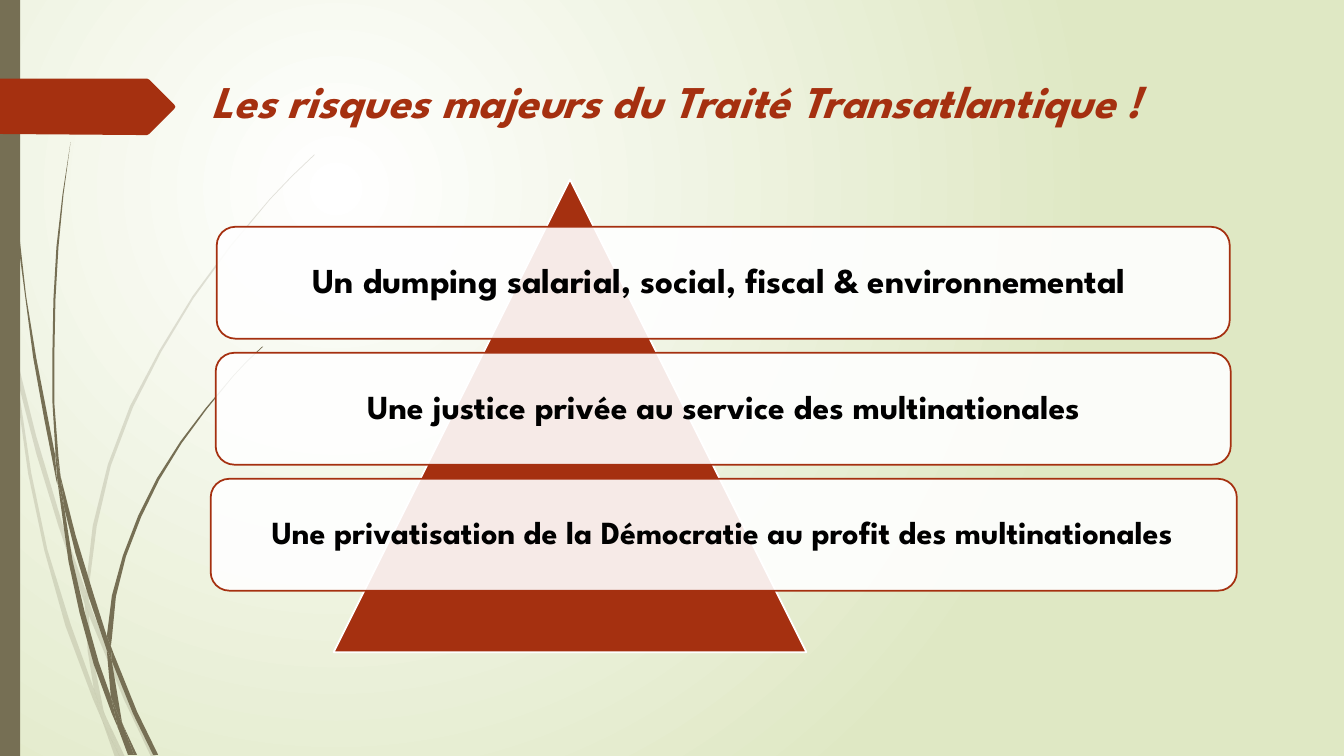
import lxml.etree
import pptx
import pptx.dml.color
import pptx.enum.shapes
import pptx.enum.text
import pptx.oxml.ns
import pptx.util

PX = 9144  # EMU: 100 px to the inch
FONT = "League Spartan"
RGB = pptx.dml.color.RGBColor
RUST = RGB(0xA5, 0x30, 0x10)
OLIVE = RGB(0x76, 0x6F, 0x54)
LIME = RGB(0xDF, 0xE8, 0xC4)
WHITE = RGB(0xFF, 0xFF, 0xFF)
BLACK = RGB(0, 0, 0)
KIND = pptx.enum.shapes.MSO_SHAPE
qn = pptx.oxml.ns.qn

# Outlines of the parts of each blade of grass
PALE = [
    [(11, 350), (9, 322), (0, 282), (0, 299), (10, 344)],
    [(58, 522), (84, 599), (85, 586), (62, 520), (36, 433), (14, 345), (17, 376),
     (36, 450)],
    [(92, 607), (88, 596), (88, 610), (123, 694), (150, 751), (155, 751), (127, 692)],
    [(119, 751), (124, 751), (105, 711)],
    [(93, 683), (70, 619), (47, 545), (31, 469), (17, 376), (11, 350), (28, 470),
     (44, 546), (65, 621), (92, 693), (101, 714), (99, 707)],
    [(84, 599), (87, 646), (93, 683), (96, 692), (105, 711), (103, 706), (91, 646),
     (88, 610), (88, 608)],
    [(88, 584), (96, 522), (110, 462), (132, 404), (160, 349), (192, 296), (229, 245),
     (268, 198), (290, 175), (312, 154), (312, 153), (289, 175), (268, 197), (228, 244),
     (191, 294), (158, 348), (129, 403), (107, 461), (92, 522), (85, 584), (85, 586),
     (88, 596)],
    [(101, 714), (114, 751), (119, 751)],
    [(88, 608), (88, 610), (88, 596), (85, 586), (84, 599)],
    [(96, 692), (93, 683), (99, 707), (101, 714), (119, 751), (105, 711)],
]
DARK = [
    [(7, 110), (17, 233), (33, 355), (44, 416), (56, 477), (57, 481), (55, 457), (55, 453),
     (36, 355), (26, 294), (19, 232), (12, 171), (8, 109), (5, 48), (4, 0), (3, 0),
     (4, 48)],
    [(88, 592), (106, 645), (106, 631), (93, 590), (75, 531), (60, 472), (64, 505),
     (75, 549)],
    [(113, 649), (110, 641), (111, 656), (132, 708), (152, 749), (157, 749), (136, 706)],
    [(110, 691), (98, 657), (84, 607), (72, 556), (64, 505), (57, 477), (68, 557),
     (79, 608), (93, 659), (111, 708), (117, 722), (116, 717)],
    [(60, 472), (58, 453), (54, 401), (54, 349), (55, 297), (58, 245), (63, 193),
     (70, 141), (62, 193), (56, 245), (53, 297), (52, 349), (52, 399), (55, 449)],
    [(133, 749), (136, 749), (122, 719)],
    [(57, 477), (64, 505), (60, 472), (55, 449), (55, 453)],
    [(111, 633), (115, 592), (125, 552), (140, 513), (158, 476), (180, 440), (205, 406),
     (231, 374), (245, 359), (261, 344), (260, 344), (245, 358), (231, 373), (204, 405),
     (179, 438), (156, 474), (137, 512), (122, 551), (111, 591), (106, 631), (110, 641)],
    [(117, 722), (127, 749), (131, 749)],
    [(106, 645), (110, 691), (116, 706), (122, 719), (121, 716), (111, 656), (109, 651)],
    [(106, 645), (109, 651), (111, 656), (110, 641), (106, 631)],
    [(116, 706), (110, 691), (116, 717), (117, 722), (130, 749), (133, 749), (122, 719)],
]
TAG = [(0, 78), (146, 78), (148, 79), (173, 104), (174, 106), (173, 108), (148, 133),
       (146, 134), (136, 134), (0, 133)]
# Text, left and width of the frame, left and width of the text, size
RISKS = [
    ("Un dumping salarial, social, fiscal & environnemental ", 215, 1005, 221, 994, 25),
    ("Une justice privée au service des multinationales", 214, 1007, 220, 996, 24),
    ("Une privatisation de la Démocratie au profit des multinationales",
     209, 1018, 214, 1007, 23),
]


def paint(shape, fill, line=None, alpha=100):
    shape.shadow.inherit = False
    shape.fill.solid()
    shape.fill.fore_color.rgb = fill
    if alpha < 100:
        tint = shape.fill._xPr.find(qn("a:solidFill"))[0]
        lxml.etree.SubElement(tint, qn("a:alpha"), val=str(alpha * 1000))
    if line is None:
        shape.line.fill.background()
    else:
        shape.line.color.rgb = line
        shape.line.width = pptx.util.Pt(1.25)


def add_form(host, points, fill, alpha=100):
    form = host.shapes.build_freeform(*points[0], scale=PX)
    form.add_line_segments(points[1:], close=True)
    paint(form.convert_to_shape(), fill, alpha=alpha)


def add_box(host, kind, x, y, wide, high, fill, line=None, alpha=100):
    box = host.shapes.add_shape(kind, x * PX, y * PX, wide * PX, high * PX)
    paint(box, fill, line, alpha)


def add_text(host, text, x, y, wide, high, size, color, slant=False):
    box = host.shapes.add_textbox(x * PX, y * PX, wide * PX, high * PX)
    frame = box.text_frame
    frame.word_wrap = True
    run = frame.paragraphs[0].add_run()
    run.text = text
    run.font.name = FONT
    run.font.size = pptx.util.Pt(size)
    run.font.bold = True
    run.font.italic = slant
    run.font.color.rgb = color
    return frame


def add_risk(host, y, text, left, wide, x, room, size):
    add_box(host, KIND.ROUNDED_RECTANGLE, left, y, wide, 111, WHITE, RUST, 90)
    frame = add_text(host, text, x, y + 5, room, 100, size, BLACK)
    frame.margin_top = frame.margin_bottom = 10 * PX
    frame.margin_left = frame.margin_right = 10 * PX
    frame.vertical_anchor = pptx.enum.text.MSO_ANCHOR.MIDDLE
    para = frame.paragraphs[0]
    para.alignment = pptx.enum.text.PP_ALIGN.CENTER
    para.line_spacing = 0.9


def add_glow(slide):
    """Fill the background with a round gradient."""
    fill = slide.background.fill
    fill.gradient()
    for stop, color in zip(fill.gradient_stops, (WHITE, LIME)):
        stop.color.rgb = color
    grad = next(slide.element.iter(qn("a:gradFill")))
    grad.remove(grad.find(qn("a:lin")))
    ring = lxml.etree.Element(qn("a:path"), {"path": "circle"})
    lxml.etree.SubElement(ring, qn("a:fillToRect"),
                          l="50000", t="50000", r="100000", b="100000")
    grad.find(qn("a:gsLst")).addnext(ring)


def main():
    deck = pptx.Presentation()
    deck.slide_width, deck.slide_height = 4000 * PX // 3, 750 * PX
    slide = deck.slides.add_slide(deck.slide_layouts[6])
    add_glow(slide)
    for parts, alpha in ((PALE, 20), (DARK, 100)):
        grass = slide.shapes.add_group_shape()
        for points in parts:
            add_form(grass, points, OLIVE, alpha)
    add_box(slide, KIND.RECTANGLE, 0, 0, 20, 750, OLIVE)
    add_form(slide, TAG, RUST)
    add_text(slide, " Les risques majeurs du Traité Transatlantique !",
             188, 68, 1094, 90, 32.4, RUST, True)
    tower = slide.shapes.add_group_shape()
    add_box(tower, KIND.ISOSCELES_TRIANGLE, 331, 178, 469, 469, RUST, WHITE)
    for i, risk in enumerate(RISKS):
        add_risk(tower, 225 + 125 * i, *risk)
    deck.save("out.pptx")


if __name__ == "__main__":
    main()
